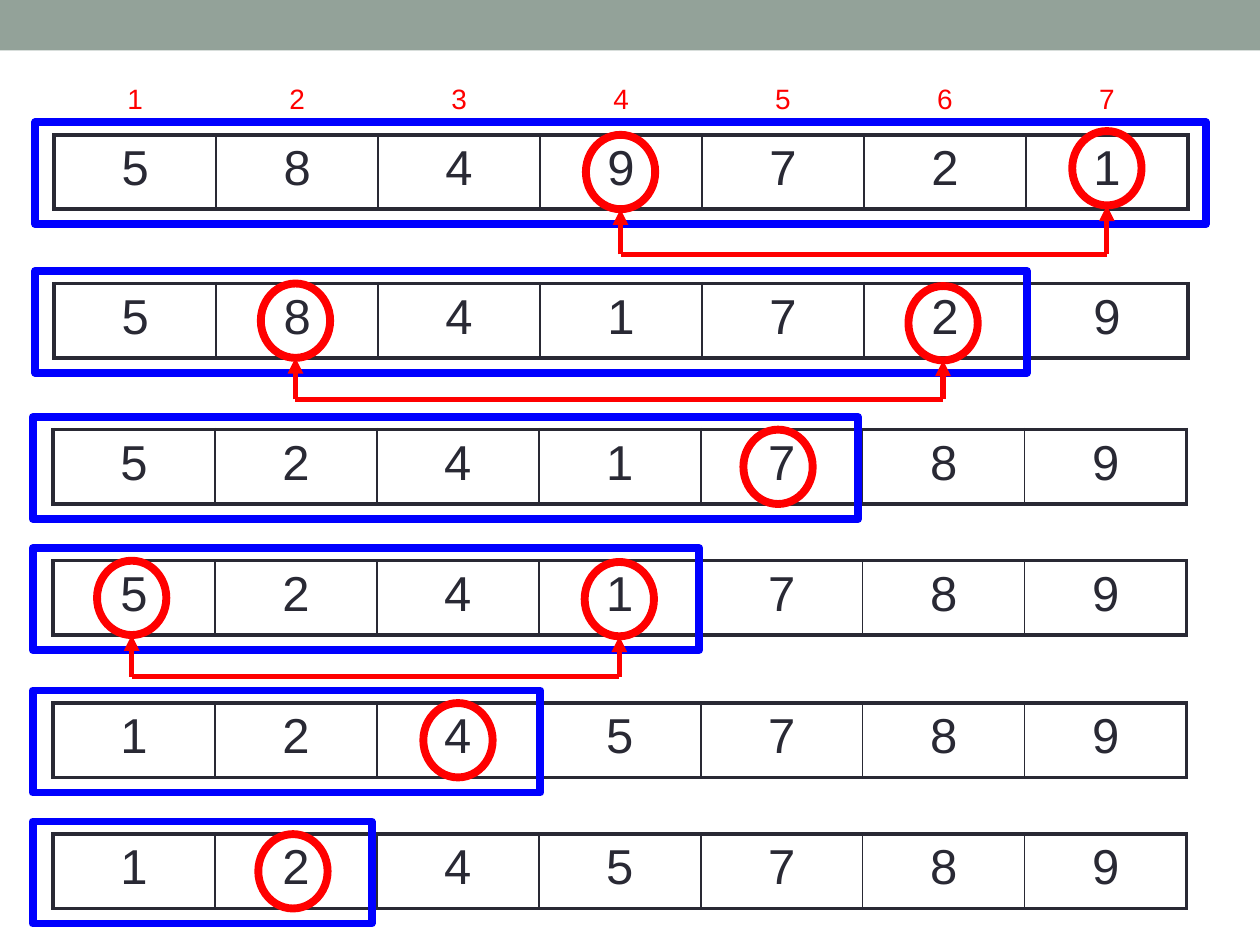
from lxml import etree
from pptx import Presentation
from pptx.dml.color import RGBColor
from pptx.enum.shapes import MSO_CONNECTOR, MSO_SHAPE
from pptx.enum.text import MSO_ANCHOR, PP_ALIGN
from pptx.oxml.ns import qn
from pptx.util import Inches, Pt

STRAIGHT = MSO_CONNECTOR.STRAIGHT
RECTANGLE, OVAL = MSO_SHAPE.RECTANGLE, MSO_SHAPE.OVAL
CENTER = PP_ALIGN.CENTER
TOP, BOTTOM = MSO_ANCHOR.TOP, MSO_ANCHOR.BOTTOM

SAGE = RGBColor(0x93, 0xA2, 0x99)
INK = RGBColor(0x29, 0x29, 0x34)
RED = RGBColor(0xFF, 0x00, 0x00)
BLUE = RGBColor(0x00, 0x00, 0xFF)

FONT = "Arial"
PLAIN_TABLE = "{2D5ABB26-0587-4C30-8999-92F81FD0307C}"
TABLE_WIDTH, ROW_HEIGHT = 9, 0.59
CIRCLE_WIDTH, CIRCLE_HEIGHT = 0.55, 0.59
WINDOW_HEIGHT, WINDOW_MARGIN = 0.81, 0.1
THIN, THICK = 1, 2.25

# left, top, values, unsorted window (left, width), circles (left, top), swap line y
PASSES = [
    (0.43, 1.07, "5849721", (0.28, 9.29), [(4.65, 1.07), (8.51, 1.04)], 2.02),
    (0.43, 2.25, "5841729", (0.28, 7.87), [(2.07, 2.25), (7.21, 2.27)], 3.17),
    (0.42, 3.41, "5241789", (0.26, 6.55), [(5.9, 3.41)], None),
    (0.42, 4.45, "5241789", (0.26, 5.29), [(0.77, 4.45), (4.64, 4.46)], 5.37),
    (0.42, 5.58, "1245789", (0.26, 4.03), [(3.36, 5.58)], None),
    (0.42, 6.62, "1245789", (0.26, 2.69), [(2.05, 6.62)], None),
]


def set_border(cell, side, width):
    line = etree.SubElement(cell._tc.get_or_add_tcPr(), qn(f"a:ln{side}"), w=str(Pt(width)))
    fill = etree.SubElement(line, qn("a:solidFill"))
    etree.SubElement(fill, qn("a:srgbClr"), val=str(INK))


def write_cell(cell, text, size, color, anchor):
    cell.vertical_anchor = anchor
    para = cell.text_frame.paragraphs[0]
    para.alignment = CENTER
    spacing = etree.SubElement(para._p.get_or_add_pPr(), qn("a:spcBef"))
    etree.SubElement(spacing, qn("a:spcPct"), val="20000")
    span = para.add_run()
    span.text = text
    span.font.name = FONT
    span.font.size = Pt(size)
    span.font.color.rgb = color


def add_number_row(page, left, top, height, values, size, color, anchor=TOP, bordered=True):
    frame = page.shapes.add_table(1, len(values), Inches(left), Inches(top),
                                  Inches(TABLE_WIDTH), Inches(height))
    table = frame.table
    table.first_row = table.horz_banding = False
    table._tbl.tblPr.find(qn("a:tableStyleId")).text = PLAIN_TABLE
    last = len(values) - 1
    for index, value in enumerate(values):
        table.columns[index].width = Inches(TABLE_WIDTH / len(values))
        cell = table.cell(0, index)
        write_cell(cell, value, size, color, anchor)
        if bordered:
            set_border(cell, "L", THICK if index == 0 else THIN)
            set_border(cell, "R", THICK if index == last else THIN)
            set_border(cell, "T", THICK)
            set_border(cell, "B", THICK)
        cell.fill.background()


def add_outline(page, kind, left, top, width, height, color):
    shape = page.shapes.add_shape(kind, Inches(left), Inches(top), Inches(width), Inches(height))
    shape.shadow.inherit = False
    shape.fill.background()
    shape.line.color.rgb = color
    shape.line.width = Pt(4.5)


def add_red_line(group, start, end, arrow=False):
    line = group.shapes.add_connector(STRAIGHT, *map(Inches, start + end))
    line.line.color.rgb = RED
    line.line.width = Pt(3)
    if arrow:
        etree.SubElement(line.line._get_or_add_ln(), qn("a:tailEnd"), type="triangle")
    etree.SubElement(line._element.spPr, qn("a:effectLst"))


def add_swap_arrow(page, circles, y):
    """Join the bottoms of two circles with a line bent at height y."""
    group = page.shapes.add_group_shape()
    tips = [(left + CIRCLE_WIDTH / 2, top + CIRCLE_HEIGHT) for left, top in circles]
    for tip in tips:
        add_red_line(group, (tip[0], y), tip, arrow=True)
    add_red_line(group, (tips[0][0], y), (tips[1][0], y))


def add_pass(page, left, top, values, window, circles, swap_y):
    """Draw one selection sort pass: numbers, unsorted window, circles and swap."""
    add_number_row(page, left, top, ROW_HEIGHT, values, 28, INK)
    window_left, window_width = window
    add_outline(page, RECTANGLE, window_left, top - WINDOW_MARGIN,
                window_width, WINDOW_HEIGHT, BLUE)
    for circle_left, circle_top in circles:
        add_outline(page, OVAL, circle_left, circle_top, CIRCLE_WIDTH, CIRCLE_HEIGHT, RED)
    if swap_y:
        add_swap_arrow(page, circles, swap_y)


def add_top_band(page, width, height):
    band = page.shapes.add_shape(RECTANGLE, 0, 0, Inches(width), Inches(height))
    band.shadow.inherit = False
    band.fill.solid()
    band.fill.fore_color.rgb = SAGE
    band.line.fill.background()


def main():
    deck = Presentation()
    deck.slide_width, deck.slide_height = Inches(10), Inches(7.5)
    page = deck.slides.add_slide(deck.slide_layouts[6])
    add_top_band(page, 10, 0.4)
    add_number_row(page, 0.43, 0.6, 0.37, "1234567", 16, RED, BOTTOM, bordered=False)
    for sort_pass in PASSES:
        add_pass(page, *sort_pass)
    deck.save("out.pptx")


if __name__ == "__main__":
    main()
